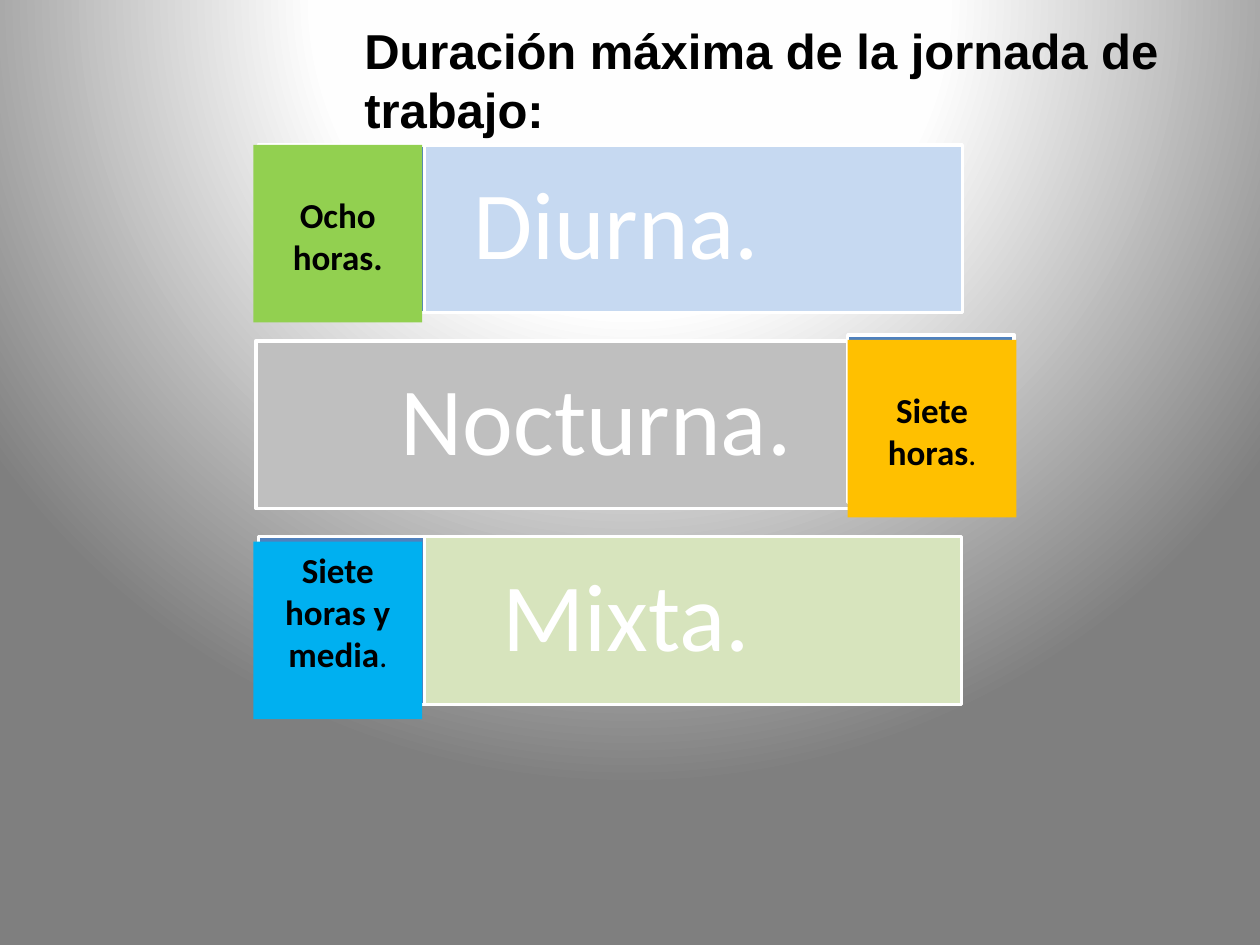
from pptx import Presentation
from pptx.dml.color import RGBColor
from pptx.enum.shapes import MSO_SHAPE as Shape
from pptx.enum.text import MSO_ANCHOR as Anchor, MSO_AUTO_SIZE as AutoSize, PP_ALIGN as Align
from pptx.oxml import parse_xml
from pptx.oxml.ns import nsdecls
from pptx.util import Cm, Pt

COLORS = {
    "white": "FFFFFF", "near_white": "FEFEFE", "gray": "7F7F7F", "black": "000000",
    "tile": "4F81BD",
    "day_bar": "C6D9F1", "night_bar": "BFBFBF", "mixed_bar": "D7E4BD",
    "day_label": "92D050", "night_label": "FFC000", "mixed_label": "00B0F0",
}
BAR_HEIGHT = 3.38
TILE_WIDTH = 3.35
LABEL_WIDTH, LABEL_HEIGHT = 3.4, 3.58
FIRST_ROW, ROW_STEP = 2.92, 3.95


def color(name):
    return RGBColor.from_string(COLORS[name])


def format_run(run, size, color_name, font="Calibri", bold=False):
    run.font.name = font
    run.font.size = Pt(size)
    run.font.bold = bold
    run.font.color.rgb = color(color_name)


def add_box(slide, left, top, width, height, fill, outlined=True):
    shape = slide.shapes.add_shape(Shape.RECTANGLE, Cm(left), Cm(top), Cm(width), Cm(height))
    shape.shadow.inherit = False
    shape.fill.solid()
    shape.fill.fore_color.rgb = color(fill)
    if outlined:
        shape.line.color.rgb = color("white")
        shape.line.width = Pt(2)
    else:
        shape.line.fill.background()
    return shape


def set_background(slide):
    stops = "".join(
        f'<a:gs pos="{percent * 1000}"><a:srgbClr val="{COLORS[name]}"/></a:gs>'
        for percent, name in ((0, "white"), (40, "near_white"), (100, "gray")))
    background = parse_xml(
        f'<p:bg {nsdecls("p", "a")}><p:bgPr><a:gradFill rotWithShape="1">'
        f'<a:gsLst>{stops}</a:gsLst><a:path path="circle">'
        '<a:fillToRect l="50000" t="-80000" r="50000" b="180000"/></a:path>'
        '</a:gradFill><a:effectLst/></p:bgPr></p:bg>')
    slide.element.cSld.insert(0, background)


def place_title(slide, left, top, width, height):
    title = slide.shapes.title
    title.left, title.top, title.width, title.height = map(Cm, (left, top, width, height))
    frame = title.text_frame
    frame.text = "Duración máxima de la jornada de trabajo:"
    frame.auto_size = AutoSize.NONE
    frame.word_wrap = True
    frame.vertical_anchor = Anchor.TOP
    frame.paragraphs[0].alignment = Align.LEFT
    format_run(frame.paragraphs[0].runs[0], 28, "black", "Arial", True)


def add_bar(slide, left, top, width, name, fill, right_inset=0.58):
    bar = add_box(slide, left, top, width, BAR_HEIGHT, fill)
    frame = bar.text_frame
    frame.text = name
    frame.vertical_anchor = Anchor.MIDDLE
    frame.margin_left = frame.margin_top = frame.margin_bottom = Cm(0.58)
    frame.margin_right = Cm(right_inset)
    paragraph = frame.paragraphs[0]
    paragraph.alignment = Align.CENTER
    paragraph.line_spacing = 0.9
    format_run(paragraph.runs[0], 55, "white")


def add_label(slide, left, top, hours, light_end, fill, top_inset):
    label = add_box(slide, left, top, LABEL_WIDTH, LABEL_HEIGHT, fill, outlined=False)
    frame = label.text_frame
    frame.text = hours
    frame.word_wrap = True
    frame.vertical_anchor = Anchor.TOP
    frame.margin_top = Cm(top_inset)
    paragraph = frame.paragraphs[0]
    paragraph.alignment = Align.CENTER
    format_run(paragraph.runs[0], 20, "black", bold=True)
    if light_end:
        end = paragraph.add_run()
        end.text = light_end
        format_run(end, 18, "black")


def add_shift(slide, top, bar, tile, label):
    """One row: wide bar, square tile and the label that covers the tile."""
    bar_left, bar_width, *bar_style = bar
    tile_left, tile_shift = tile
    label_left, label_shift, *label_style = label
    add_bar(slide, bar_left, top, bar_width, *bar_style)
    add_box(slide, tile_left, top + tile_shift, TILE_WIDTH, BAR_HEIGHT, "tile")
    add_label(slide, label_left, top + label_shift, *label_style)


def main():
    presentation = Presentation()
    presentation.slide_width, presentation.slide_height = Cm(25.4), Cm(19.05)
    slide = presentation.slides.add_slide(presentation.slide_layouts[5])
    set_background(slide)
    place_title(slide, 7.09, 0.28, 17.2, 3.84)

    # Bar, tile and label of each kind of working day
    shifts = (
        ((5.89, 13.51, "Diurna.", "day_bar", 1.02), (5.21, 0),
         (5.11, 0, "Ocho horas.", "", "day_label", 0.98)),
        ((5.16, 13.72, "Nocturna.", "night_bar"), (17.09, -0.12),
         (17.09, -0.02, "Siete horas", ".", "night_label", 0.98)),
        ((5.87, 13.51, "Mixta.", "mixed_bar"), (5.21, 0),
         (5.11, 0.1, "Siete horas y media", ".", "mixed_label", 0.13)),
    )
    for row, shift in enumerate(shifts):
        add_shift(slide, FIRST_ROW + row * ROW_STEP, *shift)

    presentation.save("out.pptx")


if __name__ == "__main__":
    main()
